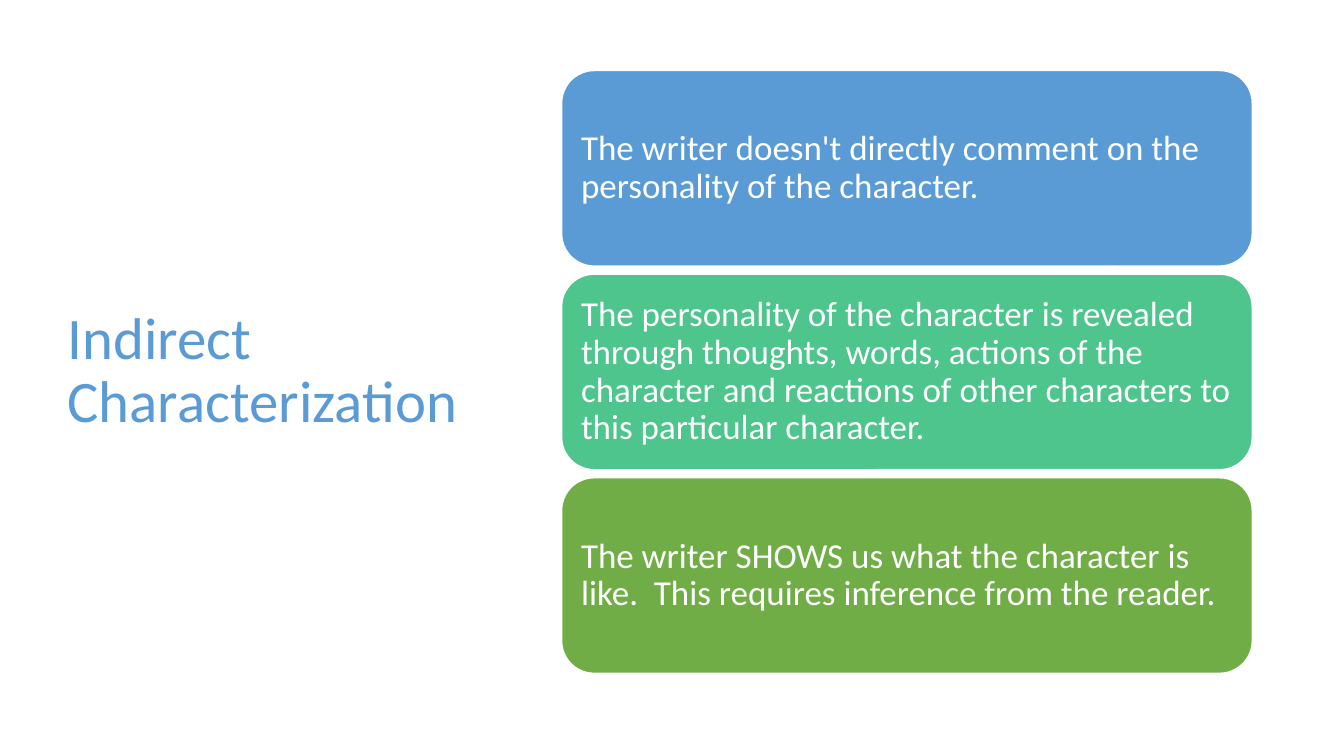
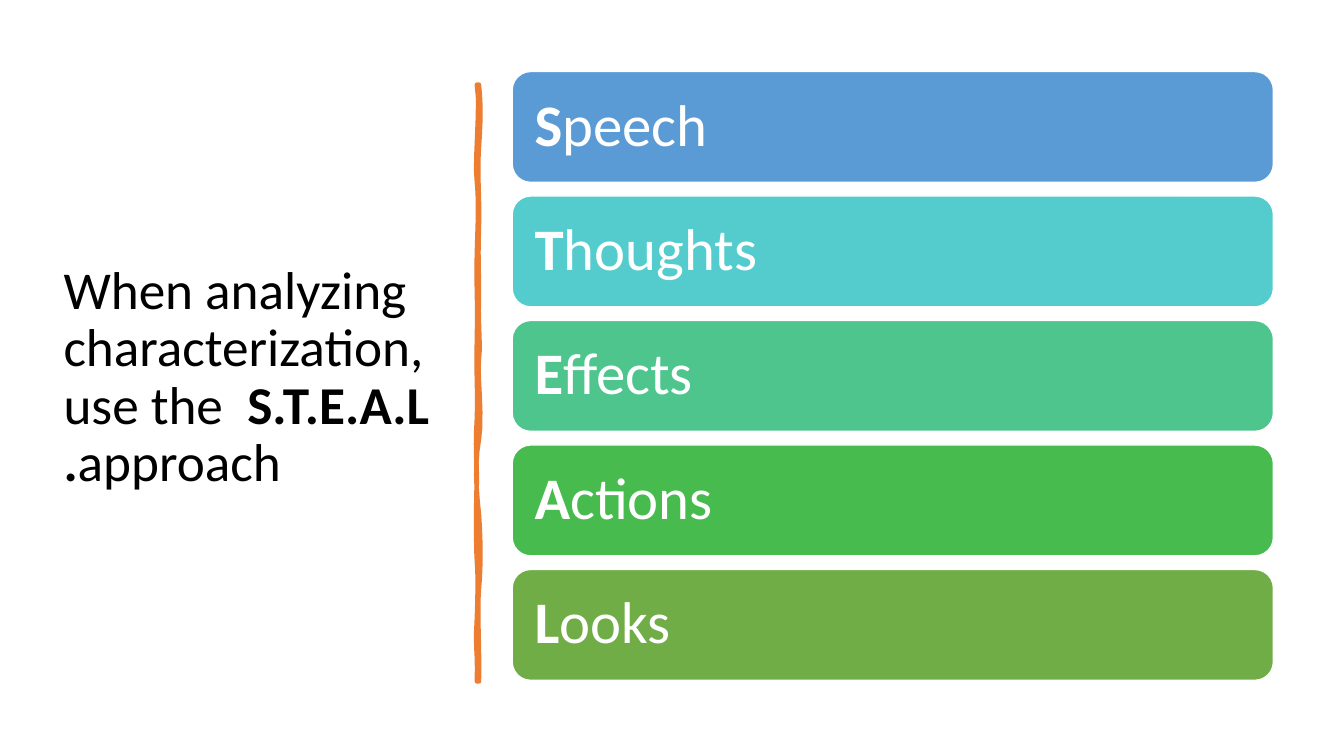
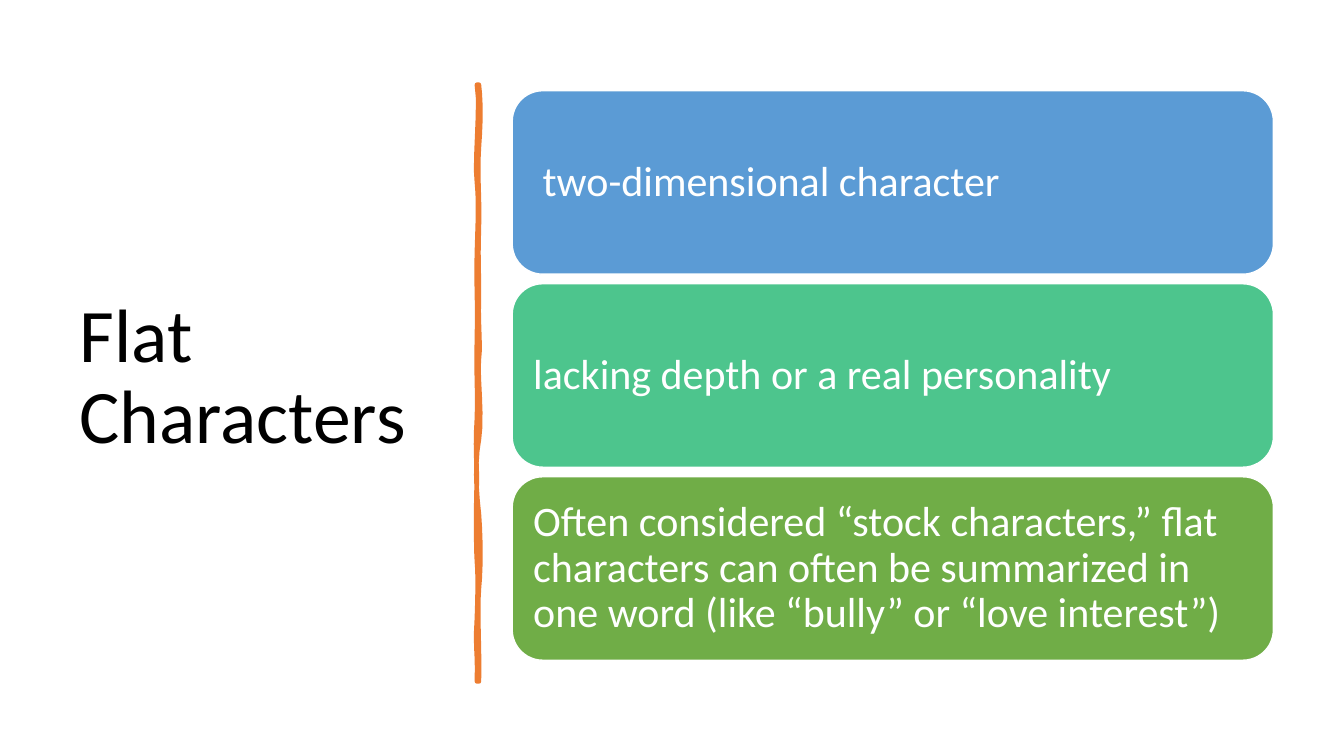
"""Build three slides on characterization with stacked colour cards."""
from dataclasses import dataclass
from typing import NamedTuple

from pptx import Presentation as new_presentation
from pptx.dml.color import RGBColor
from pptx.enum.shapes import MSO_SHAPE as Preset
from pptx.enum.text import MSO_ANCHOR as Anchor, MSO_AUTO_SIZE as AutoSize, PP_ALIGN as Align
from pptx.presentation import Presentation
from pptx.slide import Slide
from pptx.text.text import TextFrame
from pptx.util import Inches, Pt

FONT = "Calibri"
HARD_SPACE = chr(160)
WHITE = RGBColor(0xFF, 0xFF, 0xFF)
BLACK = RGBColor(0x00, 0x00, 0x00)
BLUE = RGBColor(0x5B, 0x9B, 0xD5)
TEAL = RGBColor(0x54, 0xCC, 0xCD)
MINT = RGBColor(0x4D, 0xC5, 0x8D)
GREEN = RGBColor(0x48, 0xBB, 0x4F)
OLIVE = RGBColor(0x70, 0xAD, 0x47)
ORANGE = RGBColor(0xED, 0x7D, 0x31)
THREE_COLORS = (BLUE, MINT, OLIVE)
FIVE_COLORS = (BLUE, TEAL, MINT, GREEN, OLIVE)

TITLE_ONLY = 5
CURVE_STEPS = 6
DIVIDER_START = (4.75, 0.84)
DIVIDER_CURVES = (
    (4.77, 1.02, 4.77, 1.19, 4.75, 1.46),
    (4.73, 1.73, 4.76, 1.95, 4.75, 2.26),
    (4.74, 2.57, 4.75, 2.62, 4.75, 2.94),
    (4.74, 3.25, 4.77, 3.42, 4.75, 3.56),
    (4.73, 3.7, 4.79, 4.14, 4.75, 4.36),
    (4.71, 4.57, 4.72, 4.84, 4.75, 5.1),
    (4.77, 5.36, 4.77, 5.64, 4.75, 5.84),
    (4.73, 6.03, 4.76, 6.5, 4.75, 6.76),
    (4.74, 6.76, 4.73, 6.76, 4.73, 6.76),
    (4.74, 6.46, 4.71, 6.44, 4.73, 6.13),
    (4.74, 5.83, 4.74, 5.7, 4.73, 5.57),
    (4.72, 5.44, 4.72, 4.95, 4.73, 4.77),
    (4.73, 4.59, 4.71, 4.45, 4.73, 4.15),
    (4.74, 3.86, 4.72, 3.73, 4.73, 3.35),
    (4.74, 2.98, 4.72, 2.81, 4.73, 2.5),
    (4.74, 2.18, 4.75, 2, 4.73, 1.81),
    (4.7, 1.63, 4.77, 1.04, 4.73, 0.84),
)


class Run(NamedTuple):
    """A stretch of text of one weight."""

    text: str
    bold: bool = False


Runs = tuple[Run, ...]


@dataclass(frozen=True)
class Title:
    """A slide title and its place in inches."""

    runs: Runs
    left: float
    top: float
    width: float
    height: float
    size: float
    color: RGBColor = BLACK


@dataclass(frozen=True)
class CardStack:
    """Cards spread evenly from top to bottom, in inches."""

    texts: tuple[Runs, ...]
    colors: tuple[RGBColor, ...]
    top: float
    bottom: float
    card_height: float
    size: float
    inset: float
    left: float = 5.08
    width: float = 7.55


@dataclass(frozen=True)
class Page:
    """The content of one slide."""

    title: Title
    cards: CardStack
    divider: bool = True


def plain(*texts: str) -> tuple[Runs, ...]:
    """Turn each text into a single regular run."""
    return tuple((Run(text),) for text in texts)


def acrostic(*words: str) -> tuple[Runs, ...]:
    """Set the first letter of each word in bold."""
    return tuple((Run(word[0], True), Run(word[1:])) for word in words)


PAGES = (
    Page(
        Title((Run("Indirect Characterization"),), 0.57, 0.68, 4.16, 6.02, 42, BLUE),
        CardStack(
            plain(
                "The writer doesn't directly comment on the personality of the character.",
                "The personality of the character is revealed through thoughts, words, actions of "
                "the character and reactions of other characters to this particular character.",
                f"The writer SHOWS us what the character is like.{HARD_SPACE} "
                "This requires inference from the reader.",
            ),
            THREE_COLORS, 0.7, 6.68, 1.94, 25, 0.1, left=5.57, width=6.85,
        ),
        divider=False,
    ),
    Page(
        Title(
            (Run(f"When analyzing characterization, use{HARD_SPACE}the{HARD_SPACE * 2}"),
             Run("S.T.E.A.L.", True), Run("approach")),
            0.53, 0.7, 3.9, 6.11, 38,
        ),
        CardStack(
            acrostic("Speech", "Thoughts", "Effects", "Actions", "Looks"),
            FIVE_COLORS, 0.71, 6.75, 1.1, 42, 0.17,
        ),
    ),
    Page(
        Title((Run("Flat Characters"),), 0.69, 0.7, 3.74, 6.11, 54),
        CardStack(
            plain(
                f"{HARD_SPACE}two-dimensional character",
                "lacking depth or a real personality",
                "Often considered “stock characters,” flat characters can often be summarized "
                "in one word (like “bully” or “love interest”)",
            ),
            THREE_COLORS, 0.9, 6.55, 1.82, 30, 0.12,
        ),
    ),
)


def write_text(frame: TextFrame, runs: Runs, *, size: float, color: RGBColor) -> None:
    """Fill a frame with one left-aligned, vertically centred paragraph."""
    frame.word_wrap = True
    frame.auto_size = AutoSize.NONE
    frame.vertical_anchor = Anchor.MIDDLE
    paragraph = frame.paragraphs[0]
    paragraph.alignment = Align.LEFT
    paragraph.line_spacing = 0.9
    for text, bold in runs:
        run = paragraph.add_run()
        run.text = text
        font = run.font
        font.name, font.size, font.bold = FONT, Pt(size), bold
        font.color.rgb = color


def add_title(slide: Slide, title: Title) -> None:
    """Place and fill the title placeholder."""
    shape = slide.shapes.title
    shape.left, shape.top = Inches(title.left), Inches(title.top)
    shape.width, shape.height = Inches(title.width), Inches(title.height)
    write_text(shape.text_frame, title.runs, size=title.size, color=title.color)


def add_cards(slide: Slide, cards: CardStack) -> None:
    """Draw a stack of rounded cards with equal gaps."""
    pitch = (cards.bottom - cards.top - cards.card_height) / (len(cards.texts) - 1)
    for index, (runs, color) in enumerate(zip(cards.texts, cards.colors)):
        shape = slide.shapes.add_shape(
            Preset.ROUNDED_RECTANGLE, Inches(cards.left), Inches(cards.top + index * pitch),
            Inches(cards.width), Inches(cards.card_height),
        )
        shape.shadow.inherit = False
        shape.fill.solid()
        shape.fill.fore_color.rgb = color
        shape.line.color.rgb = WHITE
        shape.line.width = Pt(1)
        frame = shape.text_frame
        frame.margin_left = frame.margin_right = Inches(cards.inset)
        frame.margin_top = frame.margin_bottom = Inches(cards.inset)
        write_text(frame, runs, size=cards.size, color=WHITE)


def divider_points() -> list[tuple[int, int]]:
    """Sample the cubic curves of the divider outline."""
    points = []
    x0, y0 = DIVIDER_START
    for x1, y1, x2, y2, x3, y3 in DIVIDER_CURVES:
        for step in range(1, CURVE_STEPS + 1):
            t = step / CURVE_STEPS
            weights = ((1 - t) ** 3, 3 * t * (1 - t) ** 2, 3 * t * t * (1 - t), t ** 3)
            x = sum(weight * value for weight, value in zip(weights, (x0, x1, x2, x3)))
            y = sum(weight * value for weight, value in zip(weights, (y0, y1, y2, y3)))
            points.append((Inches(x), Inches(y)))
        x0, y0 = x3, y3
    return points


def add_divider(slide: Slide) -> None:
    """Draw the hand-drawn vertical rule."""
    start_x, start_y = DIVIDER_START
    builder = slide.shapes.build_freeform(Inches(start_x), Inches(start_y))
    builder.add_line_segments(divider_points(), close=True)
    shape = builder.convert_to_shape()
    shape.shadow.inherit = False
    shape.fill.solid()
    shape.fill.fore_color.rgb = ORANGE
    shape.line.color.rgb = ORANGE
    shape.line.width = Pt(3.25)


def add_page(presentation: Presentation, page: Page) -> None:
    """Add one slide with its title, divider and cards."""
    slide = presentation.slides.add_slide(presentation.slide_layouts[TITLE_ONLY])
    add_title(slide, page.title)
    if page.divider:
        add_divider(slide)
    add_cards(slide, page.cards)


def main() -> None:
    """Build and save the presentation."""
    presentation = new_presentation()
    presentation.slide_width = Inches(13.33)
    presentation.slide_height = Inches(7.5)
    for page in PAGES:
        add_page(presentation, page)
    presentation.save("out.pptx")


if __name__ == "__main__":
    main()
